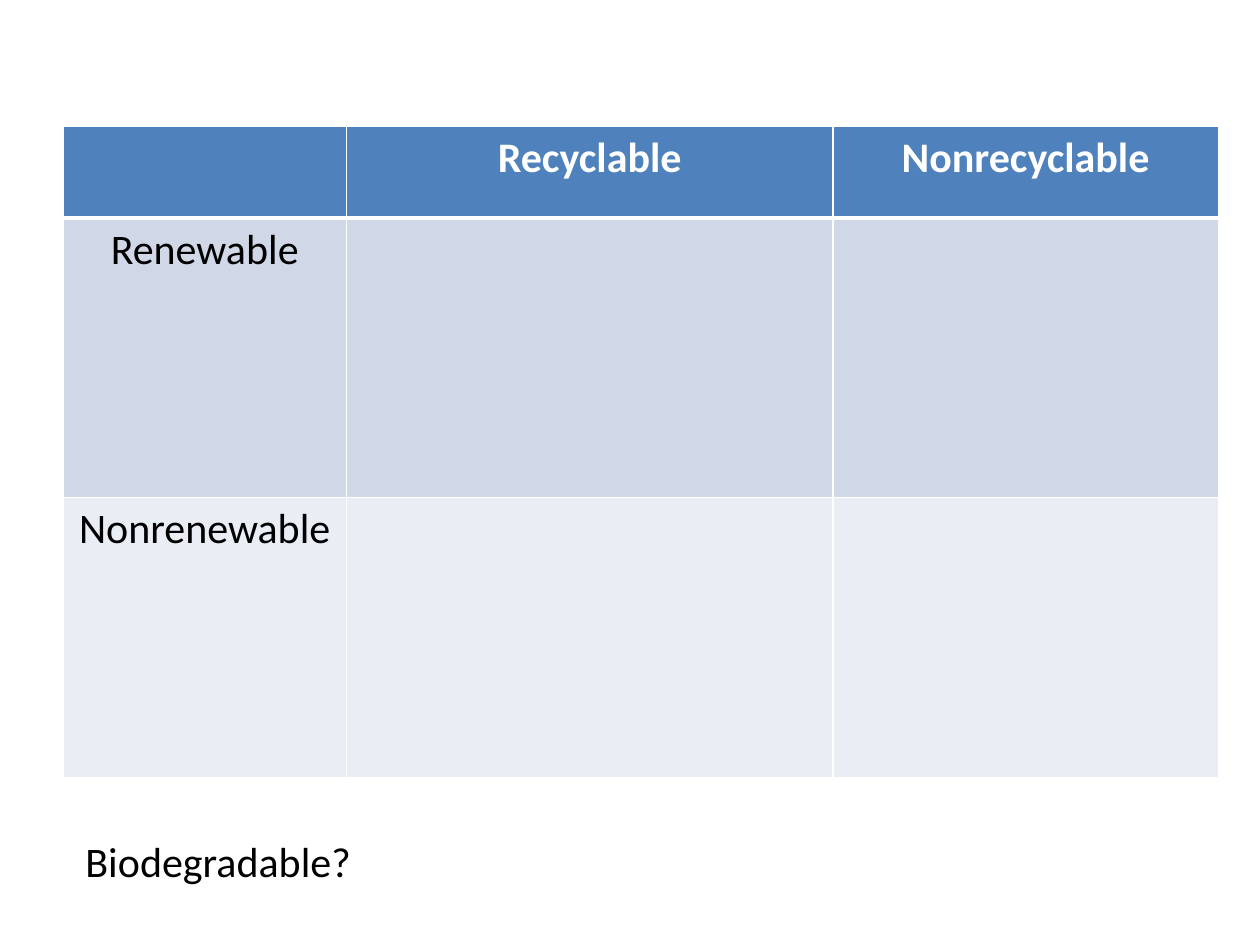
from lxml.etree import SubElement
from pptx import Presentation
from pptx.dml.color import RGBColor as RGB
from pptx.enum.text import MSO_AUTO_SIZE as AutoSize, PP_ALIGN as Align
from pptx.oxml.ns import qn
from pptx.util import Inches, Pt

COLORS = {"header": "4F81BD", "renewable": "D0D8E8", "nonrenewable": "E9EDF4",
          "white": "FFFFFF", "black": "000000"}
COLUMN_WIDTHS = [2.25, 3.86, 3.06]
ROWS = [
    (0.73, "header", ["", "Recyclable", "Nonrecyclable"]),
    (2.22, "renewable", ["Renewable", "", ""]),
    (2.22, "nonrenewable", ["Nonrenewable", "", ""]),
]


def write_text(text_frame, text, color="black", bold=False, align=Align.LEFT):
    paragraph = text_frame.paragraphs[0]
    paragraph.alignment = align
    run = paragraph.add_run()
    run.text = text
    font = run.font
    font.name, font.size, font.bold = "Calibri", Pt(24), bold
    font.color.rgb = RGB.from_string(COLORS[color])


def set_borders(cell, top=1, bottom=1):
    """Draw white cell borders; widths are in points."""
    properties = cell._tc.get_or_add_tcPr()
    for side, width in (("L", 1), ("R", 1), ("T", top), ("B", bottom)):
        line = SubElement(properties, qn(f"a:ln{side}"), w=str(Pt(width)))
        fill = SubElement(line, qn("a:solidFill"))
        SubElement(fill, qn("a:srgbClr"), val=COLORS["white"])


class SlideBuilder:
    def __init__(self, slide):
        self.slide = slide

    def add_table(self, left, top, column_widths, rows):
        width = sum(column_widths)
        height = sum(row[0] for row in rows)
        table = self.slide.shapes.add_table(
            len(rows), len(column_widths), Inches(left), Inches(top),
            Inches(width), Inches(height)).table
        for column, column_width in zip(table.columns, column_widths):
            column.width = Inches(column_width)
        for index, (row_height, fill, texts) in enumerate(rows):
            table.rows[index].height = Inches(row_height)
            is_header = index == 0
            for cell, text in zip(table.rows[index].cells, texts):
                set_borders(cell, top=3 if index == 1 else 1, bottom=3 if is_header else 1)
                cell.fill.solid()
                cell.fill.fore_color.rgb = RGB.from_string(COLORS[fill])
                if text:
                    write_text(cell.text_frame, text, bold=is_header, align=Align.CENTER,
                               color="white" if is_header else "black")

    def add_text(self, left, top, width, height, text):
        box = self.slide.shapes.add_textbox(
            Inches(left), Inches(top), Inches(width), Inches(height))
        box.text_frame.word_wrap = False
        box.text_frame.auto_size = AutoSize.SHAPE_TO_FIT_TEXT
        write_text(box.text_frame, text)


def main():
    presentation = Presentation()
    presentation.slide_width, presentation.slide_height = Inches(10), Inches(7.5)
    builder = SlideBuilder(presentation.slides.add_slide(presentation.slide_layouts[6]))
    builder.add_table(0.5, 1, COLUMN_WIDTHS, ROWS)
    builder.add_text(0.58, 6.58, 2.33, 0.5, "Biodegradable?")
    presentation.save("out.pptx")


if __name__ == "__main__":
    main()
